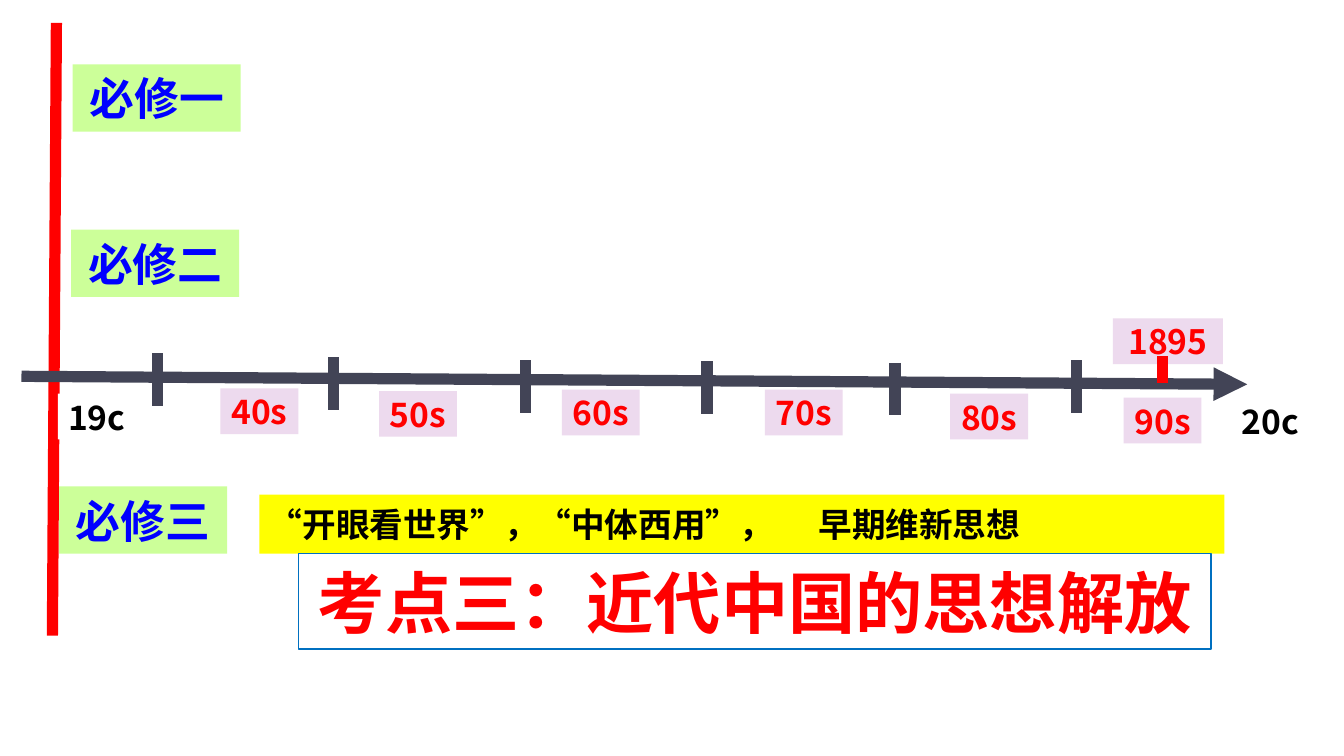
from lxml.etree import SubElement
from pptx import Presentation
from pptx.dml.color import RGBColor
from pptx.enum.shapes import MSO_CONNECTOR, MSO_SHAPE
from pptx.enum.text import MSO_ANCHOR, PP_ALIGN
from pptx.oxml.ns import qn
from pptx.util import Inches, Pt

RED = RGBColor(0xFF, 0x00, 0x00)
BLUE = RGBColor(0x00, 0x00, 0xFF)
BLACK = RGBColor(0x00, 0x00, 0x00)
WHITE = RGBColor(0xFF, 0xFF, 0xFF)
SLATE = RGBColor(0x42, 0x44, 0x56)
LILAC = RGBColor(0xED, 0xDA, 0xEE)
LIME = RGBColor(0xCC, 0xFF, 0x99)
YELLOW = RGBColor(0xFF, 0xFF, 0x00)
BORDER = RGBColor(0x00, 0x70, 0xC0)
CJK_FONT = "Noto Sans CJK SC"


class TimelineSlide:
    def __init__(self, slide):
        self.shapes = slide.shapes

    def line(self, x1, y1, x2, y2, color, arrow=False):
        connector = self.shapes.add_connector(
            MSO_CONNECTOR.STRAIGHT, Inches(x1), Inches(y1), Inches(x2), Inches(y2))
        connector.line.color.rgb = color
        connector.line.width = Pt(6)
        properties = connector._element.spPr
        if arrow:
            SubElement(properties.find(qn("a:ln")), qn("a:tailEnd"), type="triangle")
        SubElement(properties, qn("a:effectLst"))

    def box(self, text, left, top, width, height, fill, color, size=18,
            font=CJK_FONT, align=PP_ALIGN.CENTER, border=None, tab=None):
        """Draw a filled rectangle with bold text; tab is a tab stop in inches."""
        rectangle = self.shapes.add_shape(
            MSO_SHAPE.RECTANGLE, Inches(left), Inches(top), Inches(width), Inches(height))
        rectangle.shadow.inherit = False
        rectangle.fill.solid()
        rectangle.fill.fore_color.rgb = fill
        if border is None:
            rectangle.line.fill.background()
        else:
            rectangle.line.color.rgb = border
            rectangle.line.width = Pt(0.75)

        frame = rectangle.text_frame
        frame.word_wrap = border is None
        frame.vertical_anchor = MSO_ANCHOR.MIDDLE
        frame.margin_left = frame.margin_right = Inches(0.07)
        frame.margin_top = frame.margin_bottom = Inches(0.04)
        paragraph = frame.paragraphs[0]
        paragraph.text = text
        paragraph.alignment = align
        if tab is not None:
            stops = SubElement(paragraph._p.get_or_add_pPr(), qn("a:tabLst"))
            SubElement(stops, qn("a:tab"), pos=str(Inches(tab)), algn="l")
        paragraph.font.name = font
        paragraph.font.size = Pt(size)
        paragraph.font.bold = True
        paragraph.font.color.rgb = color

    def date(self, text, left, top, fill=LILAC, color=RED, width=0.58):
        self.box(text, left, top, width, 0.34, fill, color)

    def book(self, text, left, top):
        self.box(text, left, top, 1.25, 0.5, LIME, BLUE, size=24, font="Arial")


def main():
    presentation = Presentation()
    presentation.slide_width = Inches(10)
    presentation.slide_height = Inches(10 * 9 / 16)
    timeline = TimelineSlide(
        presentation.slides.add_slide(presentation.slide_layouts[6]))

    timeline.line(0.42, 0.17, 0.39, 4.73, RED)
    timeline.line(0.16, 2.8, 9.28, 2.86, SLATE, arrow=True)
    for x, top in ((1.17, 2.63), (2.48, 2.66), (3.91, 2.68),
                   (5.26, 2.69), (6.66, 2.7), (8.01, 2.68)):
        timeline.line(x, top, x, top + 0.39, SLATE)

    for century, left, top in (("19c", 0.43, 2.93), ("20c", 9.16, 2.96)):
        timeline.date(century, left, top, fill=WHITE, color=BLACK)
    for decade, left, top in (("40s", 1.64, 2.89), ("50s", 2.82, 2.91),
                              ("60s", 4.18, 2.9), ("70s", 5.69, 2.9),
                              ("80s", 7.07, 2.93), ("90s", 8.36, 2.96)):
        timeline.date(decade, left, top)
    timeline.date("1895", 8.28, 2.37, width=0.82)
    timeline.line(8.65, 2.65, 8.65, 2.85, RED)

    for title, left, top in (("必修一", 0.54, 0.48), ("必修二", 0.53, 1.71),
                             ("必修三", 0.44, 3.62)):
        timeline.book(title, left, top)

    timeline.box("“开眼看世界”，“中体西用”，\t早期维新思想", 1.93, 3.68, 7.18, 0.44,
                 YELLOW, BLACK, font="Arial", align=PP_ALIGN.LEFT, tab=4.09)
    timeline.box("考点三：近代中国的思想解放", 2.22, 4.12, 6.79, 0.71,
                 WHITE, RED, size=36, border=BORDER)

    presentation.save("out.pptx")


if __name__ == "__main__":
    main()
